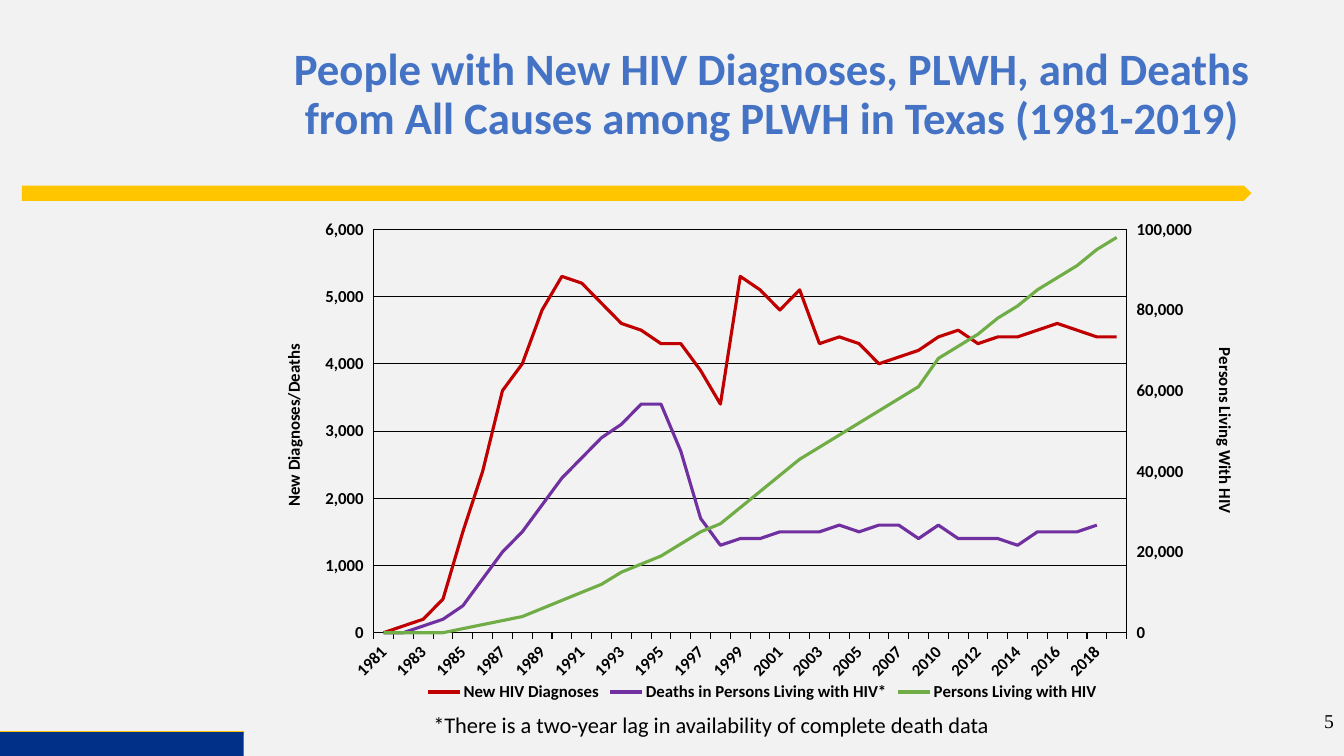
import copy

import pptx
import pptx.chart.axis
import pptx.chart.data
import pptx.dml.color
import pptx.enum.chart
import pptx.enum.shapes
import pptx.enum.text
import pptx.oxml
import pptx.oxml.ns
import pptx.util
from pptx.util import Cm, Pt

RGB = pptx.dml.color.RGBColor
BACKGROUND = RGB(0xF2, 0xF2, 0xF2)
BLACK = RGB(0, 0, 0)
GOLD = RGB(0xFF, 0xC6, 0x00)
NAVY = RGB(0x00, 0x30, 0x87)
TITLE_BLUE = RGB(0x44, 0x72, 0xC4)
RED = RGB(0xC0, 0x00, 0x00)
PURPLE = RGB(0x70, 0x30, 0xA0)
GREEN = RGB(0x70, 0xAD, 0x47)

ALIGN = pptx.enum.text.PP_ALIGN
ANCHOR = pptx.enum.text.MSO_ANCHOR
SHAPE = pptx.enum.shapes.MSO_SHAPE
TICK = pptx.enum.chart.XL_TICK_MARK
NS = pptx.oxml.ns.nsdecls("c", "a")

YEARS = [str(y) for y in range(1981, 2020) if y != 2009]
DIAGNOSES = [0, 100, 200, 500, 1500, 2400, 3600, 4000, 4800, 5300, 5200, 4900, 4600,
             4500, 4300, 4300, 3900, 3400, 5300, 5100, 4800, 5100, 4300, 4400, 4300,
             4000, 4100, 4200, 4400, 4500, 4300, 4400, 4400, 4500, 4600, 4500, 4400, 4400]
DEATHS = [0, 0, 100, 200, 400, 800, 1200, 1500, 1900, 2300, 2600, 2900, 3100, 3400,
          3400, 2700, 1700, 1300, 1400, 1400, 1500, 1500, 1500, 1600, 1500, 1600, 1600,
          1400, 1600, 1400, 1400, 1400, 1300, 1500, 1500, 1500, 1600, None]
LIVING = [0, 0, 0, 0, 1000, 2000, 3000, 4000, 6000, 8000, 10000, 12000, 15000, 17000,
          19000, 22000, 25000, 27000, 31000, 35000, 39000, 43000, 46000, 49000, 52000,
          55000, 58000, 61000, 68000, 71000, 74000, 78000, 81000, 85000, 88000, 91000,
          95000, 98000]
SERIES = [("New HIV Diagnoses", DIAGNOSES, RED),
          ("Deaths in Persons Living with HIV*", DEATHS, PURPLE),
          ("Persons Living with HIV", LIVING, GREEN)]


def add_text(s, box, text, size, color, font="Calibri", bold=False,
             align=ALIGN.LEFT, anchor=ANCHOR.TOP, line_spacing=None):
    tf = s.shapes.add_textbox(*box).text_frame
    tf.word_wrap = True
    tf.vertical_anchor = anchor
    p = tf.paragraphs[0]
    p.text = text
    p.alignment = align
    p.line_spacing = line_spacing
    style_font(p.font, size, color, bold, font)


def style_font(font, size, color=BLACK, bold=True, name="Calibri"):
    font.name, font.size, font.bold = name, Pt(size), bold
    font.color.rgb = color


def add_block(s, kind, box, color):
    sp = s.shapes.add_shape(kind, *box)
    sp.shadow.inherit = False
    sp.fill.solid()
    sp.fill.fore_color.rgb = color
    sp.line.fill.background()


def add_corner(s, left, top, width, height):
    """Navy block with a gold line showing along its top edge."""
    line_top = top + Cm(0.02)
    line = s.shapes.add_connector(pptx.enum.shapes.MSO_CONNECTOR.STRAIGHT,
                                  left, line_top, left + width, line_top)
    line.line.color.rgb = GOLD
    line.line.width = Pt(3)
    line._element.spPr.append(pptx.oxml.parse_xml(f"<a:effectLst {NS}/>"))
    add_block(s, SHAPE.RECTANGLE, (left, top, width, height), NAVY)


def set_layout(parent, target=None, **percents):
    """Place a chart part by percentages of the chart's size."""
    for old in parent.xpath("c:layout"):
        parent.remove(old)
    values = {"layoutTarget": target} if target else {}
    values.update(xMode="edge", yMode="edge")
    values.update({k: round(v / 100, 4) for k, v in percents.items()})
    items = "".join(f'<c:{k} val="{v}"/>' for k, v in values.items())
    layout = pptx.oxml.parse_xml(
        f"<c:layout {NS}><c:manualLayout>{items}</c:manualLayout></c:layout>")
    overlay = parent.xpath("c:overlay")
    if overlay:
        overlay[0].addprevious(layout)
    else:
        parent.insert(0, layout)


def style_value_axis(element, title, rotation, maximum, unit, x, y):
    axis = pptx.chart.axis.ValueAxis(element)
    axis.minimum_scale, axis.maximum_scale, axis.major_unit = 0, maximum, unit
    axis.major_tick_mark = TICK.OUTSIDE
    axis.tick_labels.number_format = "#,##0"
    axis.tick_labels.number_format_is_linked = False
    style_font(axis.tick_labels.font, 12)
    axis.format.line.fill.background()
    tf = axis.axis_title.text_frame
    tf.text = title
    style_font(tf.paragraphs[0].font, 12)
    body = element.xpath("c:title//a:bodyPr")[0]
    body.set("rot", str(rotation * 60000))
    body.set("vert", "horz")
    set_layout(element.xpath("c:title")[0], x=x, y=y)
    return axis


def add_right_axis(plot_area):
    """Move the last series to a second plot with its own axes; return the value axis."""
    plot = plot_area.xpath("c:lineChart")[0]
    cat_ax, val_ax = plot_area.xpath("c:catAx")[0], plot_area.xpath("c:valAx")[0]
    right_plot = copy.deepcopy(plot)
    plot.remove(plot.xpath("c:ser")[-1])
    for ser in right_plot.xpath("c:ser")[:-1]:
        right_plot.remove(ser)
    plot.addnext(right_plot)

    right_cat, right_val = copy.deepcopy(cat_ax), copy.deepcopy(val_ax)
    val_ax.addnext(right_val)
    right_val.addnext(right_cat)
    for node, new_id in zip(right_plot.xpath("c:axId"), ("5001", "5002")):
        node.set("val", new_id)
    for axis, own, other in ((right_cat, "5001", "5002"), (right_val, "5002", "5001")):
        axis.xpath("c:axId")[0].set("val", own)
        axis.xpath("c:crossAx")[0].set("val", other)
    right_val.xpath("c:axPos")[0].set("val", "r")
    right_val.xpath("c:crosses")[0].set("val", "max")
    pptx.chart.axis.CategoryAxis(right_cat).visible = False
    pptx.chart.axis.ValueAxis(right_val).has_major_gridlines = False
    return right_val


def add_trend_chart(s, box):
    data = pptx.chart.data.CategoryChartData(number_format="#,##0")
    data.categories = YEARS
    for name, values, _ in SERIES:
        data.add_series(name, values)
    chart = s.shapes.add_chart(pptx.enum.chart.XL_CHART_TYPE.LINE, *box, data).chart
    chart.has_title = False
    style_font(chart.font, 10, bold=False)
    for ser, (_, _, color) in zip(chart.plots[0].series, SERIES):
        ser.smooth = False
        ser.format.line.color.rgb = color
        ser.format.line.width = Pt(2.25)

    # Legend
    chart.has_legend = True
    chart.legend.position = pptx.enum.chart.XL_LEGEND_POSITION.BOTTOM
    chart.legend.include_in_layout = False
    style_font(chart.legend.font, 12)

    # Years, every second one labelled on a slant
    cat = chart.category_axis
    cat.major_tick_mark = TICK.OUTSIDE
    cat.format.line.color.rgb = BLACK
    cat.format.line.width = Pt(0.75)
    style_font(cat.tick_labels.font, 12)
    plot_area = chart.element.xpath(".//c:plotArea")[0]
    cat_ax = plot_area.xpath("c:catAx")[0]
    cat_ax.xpath("c:txPr/a:bodyPr")[0].set("rot", str(-45 * 60000))
    for tag, step in (("tickLblSkip", 2), ("tickMarkSkip", 1)):
        cat_ax.xpath("c:noMultiLvlLbl")[0].addprevious(
            pptx.oxml.parse_xml(f'<c:{tag} {NS} val="{step}"/>'))

    # Value axes
    right = add_right_axis(plot_area)
    left = style_value_axis(plot_area.xpath("c:valAx")[0], "New Diagnoses/Deaths",
                            -90, 6000, 1000, 0, 26.7)
    left.has_major_gridlines = True
    left.major_gridlines.format.line.color.rgb = BLACK
    left.major_gridlines.format.line.width = Pt(0.75)
    style_value_axis(right, "Persons Living With HIV", 90, 100000, 20000, 96.3, 27.5)

    # Framed plot on a clear background
    set_layout(plot_area, "inner", x=9.8, y=4.3, w=77.9, h=81)
    plot_area.append(pptx.oxml.parse_xml(
        f'<c:spPr {NS}><a:noFill/><a:ln w="{Pt(0.75)}"><a:solidFill>'
        f'<a:srgbClr val="{BLACK}"/></a:solidFill></a:ln></c:spPr>'))
    chart.element.xpath("c:chart")[0].addnext(pptx.oxml.parse_xml(
        f"<c:spPr {NS}><a:noFill/><a:ln><a:noFill/></a:ln></c:spPr>"))


def build_slide(prs):
    s = prs.slides.add_slide(prs.slide_layouts[6])
    s.background.fill.solid()
    s.background.fill.fore_color.rgb = BACKGROUND

    # Decoration
    add_block(s, SHAPE.PENTAGON, (Cm(0.55), Cm(4.68), Cm(30.99), Cm(0.38)), GOLD)
    add_corner(s, Cm(0), Cm(18.45), Cm(6.14), Cm(0.6))

    # Page number, title and footnote
    add_text(s, (Cm(26.25), Cm(17.65), Cm(7.62), Cm(1.02)), "5", 14, BLACK,
             font="Times New Roman", align=ALIGN.RIGHT, anchor=ANCHOR.MIDDLE)
    add_text(s, (Cm(7.03), Cm(0.57), Cm(24.86), Cm(3.68)),
             "People with New HIV Diagnoses, PLWH, and Deaths from All Causes "
             "among PLWH in Texas (1981-2019)", 32, TITLE_BLUE, bold=True,
             align=ALIGN.CENTER, anchor=ANCHOR.MIDDLE, line_spacing=0.9)
    add_text(s, (Cm(10.67), Cm(17.79), Cm(17.58), Cm(0.94)),
             "*There is a two-year lag in availability of complete death data", 16, BLACK)

    add_trend_chart(s, (Cm(7.03), Cm(5.24), Cm(24.36), Cm(12.55)))


def main():
    prs = pptx.Presentation()
    prs.slide_width, prs.slide_height = Cm(33.87), Cm(19.05)
    build_slide(prs)
    prs.save("out.pptx")


if __name__ == "__main__":
    main()
